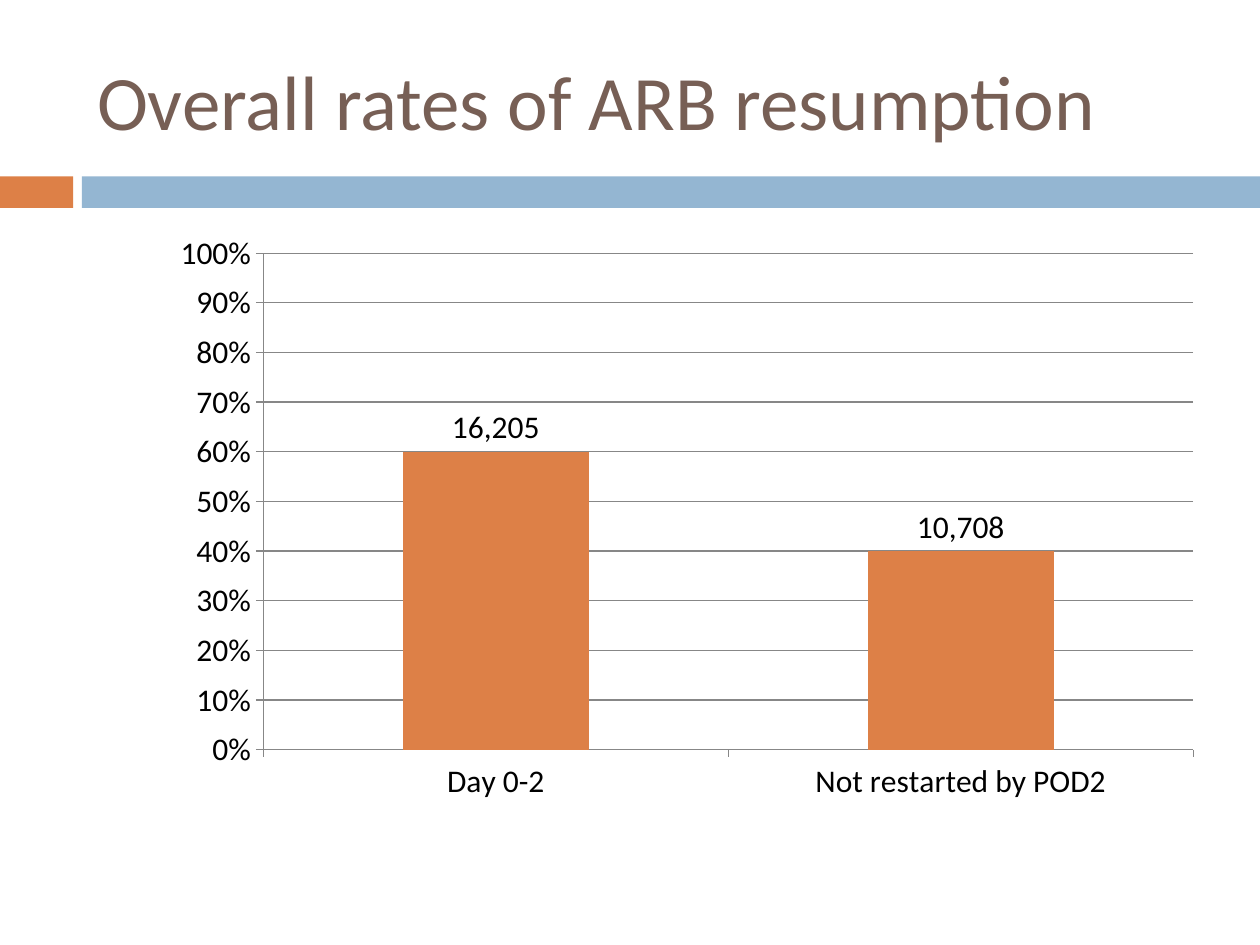
from dataclasses import dataclass

from lxml.etree import SubElement
from pptx import Presentation
from pptx.chart.data import CategoryChartData
from pptx.dml.color import RGBColor
from pptx.enum.chart import XL_CHART_TYPE, XL_LABEL_POSITION, XL_TICK_MARK
from pptx.enum.shapes import MSO_SHAPE
from pptx.enum.text import MSO_ANCHOR, MSO_AUTO_SIZE, PP_ALIGN
from pptx.oxml.ns import qn
from pptx.util import Inches, Pt

WIDTH, HEIGHT = 10, 7.5
FONT = "Calibri"
ORANGE, BLUE, BROWN, GREY, BLACK = "DD8047", "94B6D2", "775F55", "878787", "000000"


@dataclass
class Box:
    """A rectangle in inches."""
    left: float
    top: float
    width: float
    height: float

    def emu(self) -> list:
        return [Inches(v) for v in (self.left, self.top, self.width, self.height)]


@dataclass
class Band:
    box: Box
    color: str


@dataclass
class Bar:
    category: str
    share: float
    label: str


BAND_TOP, BAND_HEIGHT, BLUE_LEFT = 1.4, 0.25, 0.65
BANDS = [
    Band(Box(0, BAND_TOP, 0.58, BAND_HEIGHT), ORANGE),
    Band(Box(BLUE_LEFT, BAND_TOP, WIDTH - BLUE_LEFT, BAND_HEIGHT), BLUE),
]
TITLE_BOX = Box(0.67, 0.25, 8.92, 1.08)
CHART_BOX = Box(0.67, 1.75, 8.92, 4.92)
PLOT_BOX = Box(1.42, 0.26, 7.38, 3.94)  # within the chart
BARS = [
    Bar("Day 0-2", 0.6, "16,205"),
    Bar("Not restarted by POD2", 0.4, "10,708"),
]


def rgb(value: str) -> RGBColor:
    return RGBColor.from_string(value)


def apply(obj, values: dict) -> None:
    for name, value in values.items():
        setattr(obj, name, value)


def set_font(font, size: float, color: str) -> None:
    apply(font, {"name": FONT, "size": Pt(size), "bold": False})
    font.color.rgb = rgb(color)


def set_line(line) -> None:
    line.width = Pt(0.75)
    line.color.rgb = rgb(GREY)


def draw_band(s, band: Band) -> None:
    sp = s.shapes.add_shape(MSO_SHAPE.RECTANGLE, *band.box.emu())
    sp.shadow.inherit = False
    sp.fill.solid()
    sp.fill.fore_color.rgb = rgb(band.color)
    sp.line.fill.background()


def draw_title(s, text: str) -> None:
    sp = s.shapes.title
    apply(sp, dict(zip(("left", "top", "width", "height"), TITLE_BOX.emu())))
    tf = sp.text_frame
    apply(tf, {"word_wrap": True, "auto_size": MSO_AUTO_SIZE.NONE,
               "vertical_anchor": MSO_ANCHOR.MIDDLE})
    p = tf.paragraphs[0]
    p.alignment = PP_ALIGN.LEFT
    r = p.add_run()
    r.text = text
    set_font(r.font, 44, BROWN)


def place_plot(chart) -> None:
    """Fix the inner plot area by shares of the chart."""
    area = chart.plots[0]._element.getparent()
    layout = area.find(qn("c:layout"))
    if layout is None:
        layout = SubElement(area, qn("c:layout"))
        area.insert(0, layout)
    manual = SubElement(layout, qn("c:manualLayout"))
    settings = {
        "layoutTarget": "inner", "xMode": "edge", "yMode": "edge",
        "x": PLOT_BOX.left / CHART_BOX.width,
        "y": PLOT_BOX.top / CHART_BOX.height,
        "w": PLOT_BOX.width / CHART_BOX.width,
        "h": PLOT_BOX.height / CHART_BOX.height,
    }
    for name, value in settings.items():
        SubElement(manual, qn(f"c:{name}")).set("val", str(value))


def draw_chart(s, bars: list[Bar]) -> None:
    data = CategoryChartData(number_format="0%")
    data.categories = [b.category for b in bars]
    data.add_series("Series 1", [b.share for b in bars])
    chart = s.shapes.add_chart(
        XL_CHART_TYPE.COLUMN_CLUSTERED, *CHART_BOX.emu(), data).chart
    apply(chart, {"has_legend": False, "has_title": False})
    set_font(chart.font, 18, BLACK)
    place_plot(chart)

    # Axes
    for axis in (chart.category_axis, chart.value_axis):
        apply(axis, {"major_tick_mark": XL_TICK_MARK.OUTSIDE,
                     "minor_tick_mark": XL_TICK_MARK.NONE})
        set_line(axis.format.line)
    axis = chart.value_axis
    apply(axis, {"minimum_scale": 0, "maximum_scale": 1, "major_unit": 0.1,
                 "has_major_gridlines": True})
    set_line(axis.major_gridlines.format.line)
    apply(axis.tick_labels, {"number_format": "0%", "number_format_is_linked": False})

    # Columns and their count labels
    plot = chart.plots[0]
    apply(plot, {"gap_width": 150, "vary_by_categories": False})
    series = plot.series[0]
    series.format.fill.solid()
    series.format.fill.fore_color.rgb = rgb(ORANGE)
    for i, bar in enumerate(bars):
        label = series.points[i].data_label
        r = label.text_frame.paragraphs[0].add_run()
        r.text = bar.label
        set_font(r.font, 18, BLACK)
        label.position = XL_LABEL_POSITION.OUTSIDE_END


def main() -> None:
    prs = Presentation()
    apply(prs, {"slide_width": Inches(WIDTH), "slide_height": Inches(HEIGHT)})
    s = prs.slides.add_slide(prs.slide_layouts[5])
    for band in BANDS:
        draw_band(s, band)
    draw_title(s, "Overall rates of ARB resumption")
    draw_chart(s, BARS)
    prs.save("out.pptx")


if __name__ == "__main__":
    main()
